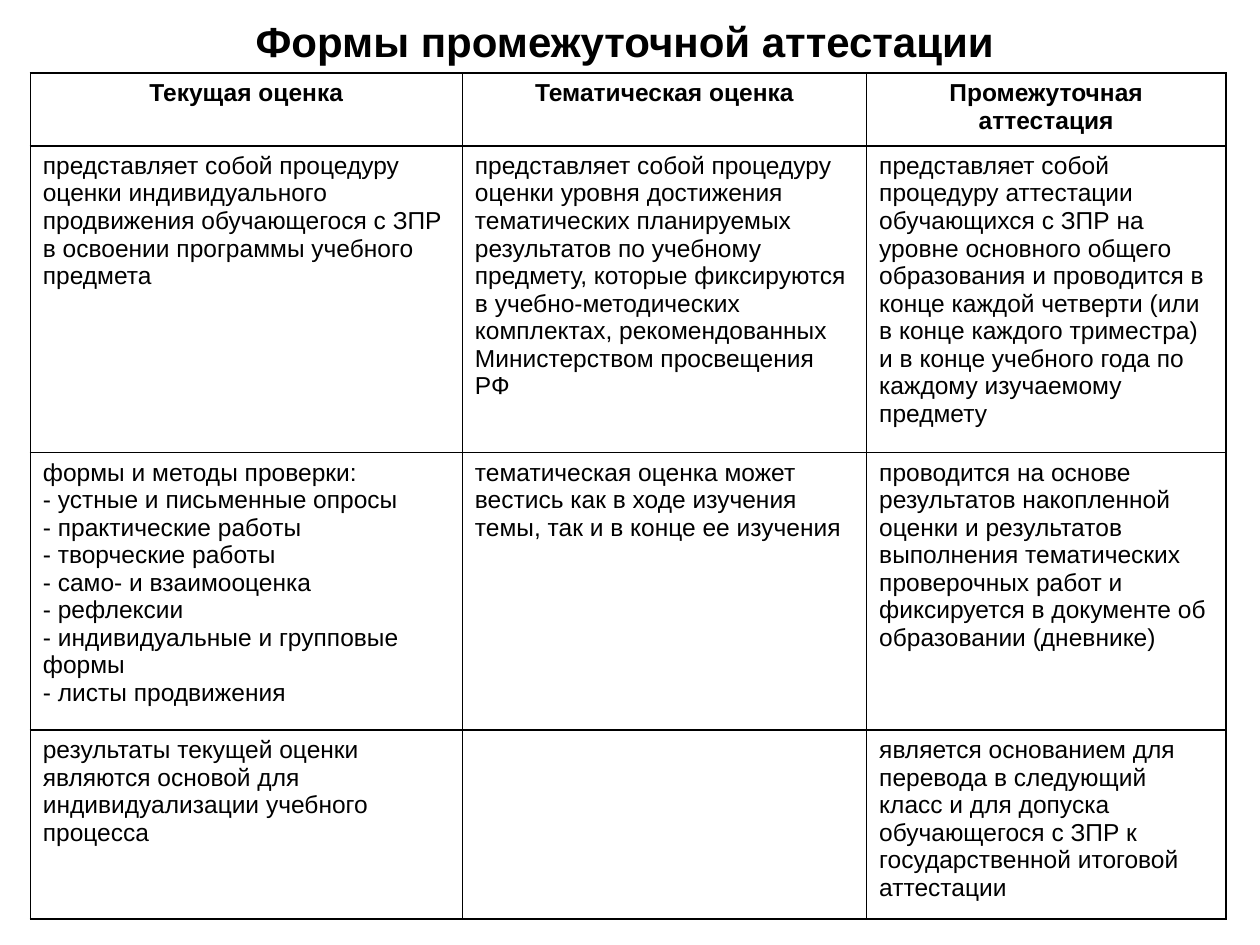
"""Build a slide with a table that compares three forms of assessment."""
from lxml import etree
from pptx import Presentation
from pptx.dml.color import RGBColor
from pptx.enum.text import MSO_ANCHOR, MSO_AUTO_SIZE, PP_ALIGN
from pptx.oxml.ns import qn
from pptx.util import Cm, Pt

LEFT, MID = PP_ALIGN.LEFT, PP_ALIGN.CENTER
CENTRE, GROW = MSO_ANCHOR.MIDDLE, MSO_AUTO_SIZE.SHAPE_TO_FIT_TEXT

TITLE = "Формы промежуточной аттестации"
ROWS = [
    ("Текущая оценка", "Тематическая оценка", "Промежуточная аттестация"),
    (
        "представляет собой процедуру оценки индивидуального продвижения "
        "обучающегося с ЗПР в освоении программы учебного предмета",
        "представляет собой процедуру оценки уровня достижения тематических "
        "планируемых результатов по учебному предмету, которые фиксируются "
        "в учебно-методических комплектах, рекомендованных Министерством "
        "просвещения РФ",
        "представляет собой процедуру аттестации обучающихся с ЗПР на уровне "
        "основного общего образования и проводится в конце каждой четверти "
        "(или в конце каждого триместра) и в конце учебного года по каждому "
        "изучаемому предмету",
    ),
    (
        "формы и методы проверки:\n"
        "- устные и письменные опросы\n"
        "- практические работы\n"
        "- творческие работы\n"
        "- само- и взаимооценка\n"
        "- рефлексии\n"
        "- индивидуальные и групповые формы\n"
        "- листы продвижения",
        "тематическая оценка может вестись как в ходе изучения темы, "
        "так и в конце ее изучения",
        "проводится на основе результатов накопленной оценки и результатов "
        "выполнения тематических проверочных работ и фиксируется в документе "
        "об образовании (дневнике)",
    ),
    (
        "результаты текущей оценки являются основой для индивидуализации "
        "учебного процесса",
        "",
        "является основанием для перевода в следующий класс и для допуска "
        "обучающегося с ЗПР к государственной итоговой аттестации",
    ),
]
WIDTHS = (8.71, 8.15, 7.24)
HEIGHTS = (1.47, 6.17, 4.52, 2.21)
COLORS = {"ink": "000000", "paper": "FFFFFF"}
FONT = "Arial"


def write(frame, text, size=14, bold=False, align=LEFT):
    frame.text = text
    for para in frame.paragraphs:
        para.alignment = align
        para.font.size = Pt(size)
        for run in para.runs:
            run.font.name = FONT
            run.font.size = Pt(size)
            run.font.bold = bold
            run.font.color.rgb = RGBColor.from_string(COLORS["ink"])


def border(cell):
    props = cell._tc.get_or_add_tcPr()
    for side in ("lnL", "lnR", "lnT", "lnB"):
        line = etree.SubElement(props, qn(f"a:{side}"), w=str(Pt(1)))
        fill = etree.SubElement(line, qn("a:solidFill"))
        etree.SubElement(fill, qn("a:srgbClr"), val=COLORS["ink"])


def add_grid(slide):
    frame = slide.shapes.add_table(
        len(ROWS), len(WIDTHS), Cm(0.61), Cm(1.47), Cm(sum(WIDTHS)), Cm(17.07))
    table = frame.table
    for col, width in zip(table.columns, WIDTHS):
        col.width = Cm(width)
    for r, (texts, height) in enumerate(zip(ROWS, HEIGHTS)):
        table.rows[r].height = Cm(height)
        head = r == 0
        for c, text in enumerate(texts):
            cell = table.cell(r, c)
            write(cell.text_frame, text, bold=head, align=MID if head else LEFT)
            border(cell)
            cell.fill.solid()
            cell.fill.fore_color.rgb = RGBColor.from_string(COLORS["paper"])


def add_title(slide):
    title = slide.shapes.title
    title.left, title.top = Cm(1.09), Cm(0.18)
    title.width, title.height = Cm(23.01), Cm(1.27)
    frame = title.text_frame
    frame.word_wrap = True
    frame.auto_size = GROW
    frame.vertical_anchor = CENTRE
    write(frame, TITLE, size=24, bold=True, align=MID)


def main():
    deck = Presentation()
    deck.slide_width, deck.slide_height = Cm(25.4), Cm(19.05)
    slide = deck.slides.add_slide(deck.slide_layouts[5])
    add_grid(slide)
    add_title(slide)
    deck.save("out.pptx")


if __name__ == "__main__":
    main()
